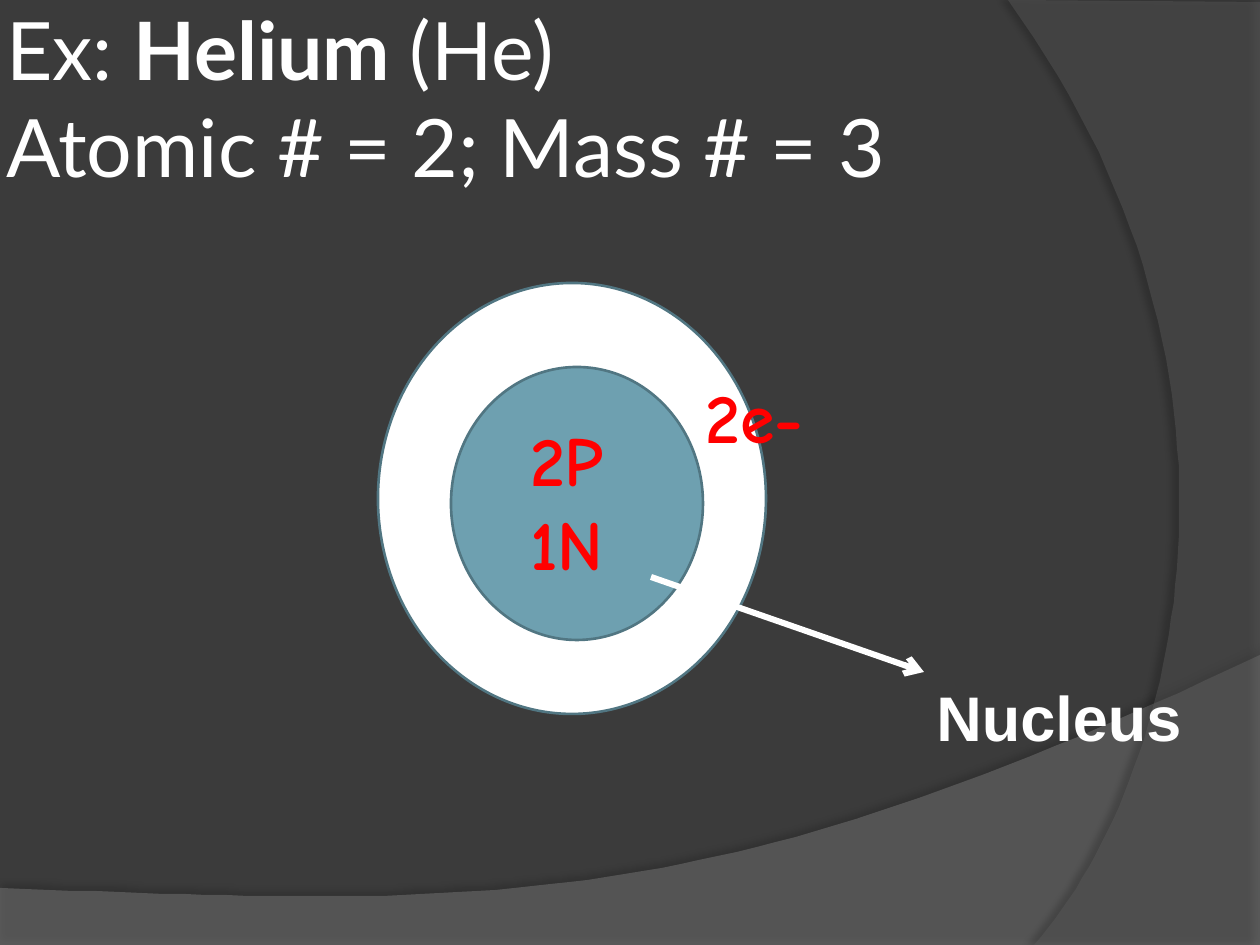
from dataclasses import dataclass

from lxml import etree
from pptx import Presentation
from pptx import util as u
from pptx.dml.color import RGBColor
from pptx.enum import shapes, text
from pptx.oxml.ns import qn

PX = 914400 / 126
WHITE, RED = "FFFFFF", "FF0000"

Point = tuple[int, int]


@dataclass(frozen=True)
class Box:
    left: int
    top: int
    width: int
    height: int

    def emu(self) -> list[int]:
        return [px(v) for v in (self.left, self.top, self.width, self.height)]


@dataclass(frozen=True)
class Swoosh:
    corners: list[Point]
    curve: tuple[Point, Point, Point, Point]
    color: str
    opacity: int
    shadow_opacity: int
    shadow_distance: float
    shadow_angle: int


@dataclass(frozen=True)
class Shell:
    box: Box
    color: str


@dataclass(frozen=True)
class Label:
    box: Box
    words: str
    font: str
    size: int
    color: str
    align: text.PP_ALIGN = text.PP_ALIGN.LEFT


SWOOSHES = [
    Swoosh([(0, 945), (1260, 945)], ((1260, 655), (704, 919), (493, 906), (0, 888)),
           "7F7F7F", 45, 35, 3.5, 270),
    Swoosh([(1260, 2), (1260, 945)], ((1034, 945), (1178, 780), (1283, 378), (1008, 0)),
           "5E5E5E", 40, 45, 4, 180),
]
SHELLS = [
    Shell(Box(378, 283, 388, 431), WHITE),
    Shell(Box(451, 367, 252, 273), "6EA0B0"),
]
PARTICLES = Label(Box(504, 410, 126, 183), "2P\n1N", "Comic Neue", 40, RED,
                  text.PP_ALIGN.CENTER)
ELECTRONS = Label(Box(693, 367, 210, 97), "2e-", "Comic Neue", 40, RED)
NUCLEUS = Label(Box(924, 672, 294, 89), "Nucleus", "Arial", 36, WHITE)


def px(value: float) -> int:
    return round(value * PX)


def rgb(color: str) -> RGBColor:
    return RGBColor.from_string(color)


def style(font, name: str, size: int, color: str, bold: bool) -> None:
    font.name, font.size, font.bold = name, u.Pt(size), bold
    font.color.rgb = rgb(color)


def bezier(curve: tuple[Point, Point, Point, Point], steps: int = 60) -> list[Point]:
    """Points along a cubic curve, both ends included."""
    points = []
    for step in range(steps + 1):
        t = step / steps
        weights = ((1 - t) ** 3, 3 * t * (1 - t) ** 2, 3 * t * t * (1 - t), t ** 3)
        points.append(tuple(sum(w * p[axis] for w, p in zip(weights, curve))
                            for axis in (0, 1)))
    return points


def add_alpha(color_element, percent: int) -> None:
    etree.SubElement(color_element, qn("a:alpha"), val=str(percent * 1000))


def draw_swoosh(slide, swoosh: Swoosh) -> None:
    first, *rest = swoosh.corners + bezier(swoosh.curve)
    builder = slide.shapes.build_freeform(*first, scale=PX)
    builder.add_line_segments(rest, close=True)
    shape = builder.convert_to_shape()
    shape.fill.solid()
    shape.fill.fore_color.rgb = rgb(swoosh.color)
    shape.line.fill.background()
    shape.shadow.inherit = False
    properties = shape._element.spPr
    add_alpha(properties.find(f"{qn('a:solidFill')}/{qn('a:srgbClr')}"), swoosh.opacity)
    shadow = etree.SubElement(
        properties.find(qn("a:effectLst")), qn("a:outerShdw"),
        blurRad=str(u.Pt(4)), dist=str(u.Pt(swoosh.shadow_distance)),
        dir=str(swoosh.shadow_angle * 60000), algn="ctr", rotWithShape="0")
    add_alpha(etree.SubElement(shadow, qn("a:srgbClr"), val="000000"),
              swoosh.shadow_opacity)


def write_title(slide) -> None:
    title = slide.shapes.title
    title.left, title.top, title.width, title.height = Box(0, 38, 1187, 214).emu()
    frame = title.text_frame
    frame.auto_size = text.MSO_AUTO_SIZE.NONE
    frame.word_wrap = True
    frame.vertical_anchor = text.MSO_ANCHOR.MIDDLE
    frame.margin_left = frame.margin_right = u.Inches(0.05)
    frame.margin_top = frame.margin_bottom = u.Inches(0.05)
    frame.text = "Ex: "
    heading = frame.paragraphs[0]
    heading.alignment = text.PP_ALIGN.LEFT
    heading.add_run().text = "Helium "
    for line in ("(He)", "Atomic # = 2; Mass # = 3 "):
        heading.add_run().text = line
        heading.add_line_break()
    for run in heading.runs:
        style(run.font, "Lato", 46, WHITE, run.text == "Helium ")
    end = etree.SubElement(heading._p, qn("a:endParaRPr"), sz="4600")
    etree.SubElement(end, qn("a:latin"), typeface="Lato")


def draw_shell(group, shell: Shell) -> None:
    ellipse = group.shapes.add_shape(shapes.MSO_SHAPE.OVAL, *shell.box.emu())
    ellipse.fill.solid()
    ellipse.fill.fore_color.rgb = rgb(shell.color)
    ellipse.line.color.rgb = rgb("517682")
    ellipse.line.width = u.Pt(1.5)
    ellipse.shadow.inherit = False


def write_label(slide, label: Label) -> None:
    frame = slide.shapes.add_textbox(*label.box.emu()).text_frame
    frame.word_wrap = True
    frame.auto_size = text.MSO_AUTO_SIZE.SHAPE_TO_FIT_TEXT
    frame.text = label.words
    for paragraph in frame.paragraphs:
        paragraph.alignment = label.align
        style(paragraph.runs[0].font, label.font, label.size, label.color, True)


def draw_arrow(slide, start: Point, end: Point) -> None:
    arrow = slide.shapes.add_connector(
        shapes.MSO_CONNECTOR.STRAIGHT, *map(px, start + end))
    arrow.line.color.rgb = rgb(WHITE)
    arrow.line.width = u.Pt(3.5)
    etree.SubElement(arrow.line._get_or_add_ln(), qn("a:tailEnd"), type="arrow")
    etree.SubElement(arrow._element.spPr, qn("a:effectLst"))


def main() -> None:
    deck = Presentation()
    deck.slide_width, deck.slide_height = px(1260), px(945)
    slide = deck.slides.add_slide(deck.slide_layouts.get_by_name("Title Only"))
    slide.background.fill.solid()
    slide.background.fill.fore_color.rgb = rgb("3B3B3B")

    for swoosh in SWOOSHES:
        draw_swoosh(slide, swoosh)
    write_title(slide)
    atom = slide.shapes.add_group_shape()
    for shell in SHELLS:
        draw_shell(atom, shell)
    write_label(slide, PARTICLES)
    write_label(slide, ELECTRONS)
    draw_arrow(slide, (651, 577), (924, 672))
    write_label(slide, NUCLEUS)
    deck.save("out.pptx")


if __name__ == "__main__":
    main()
